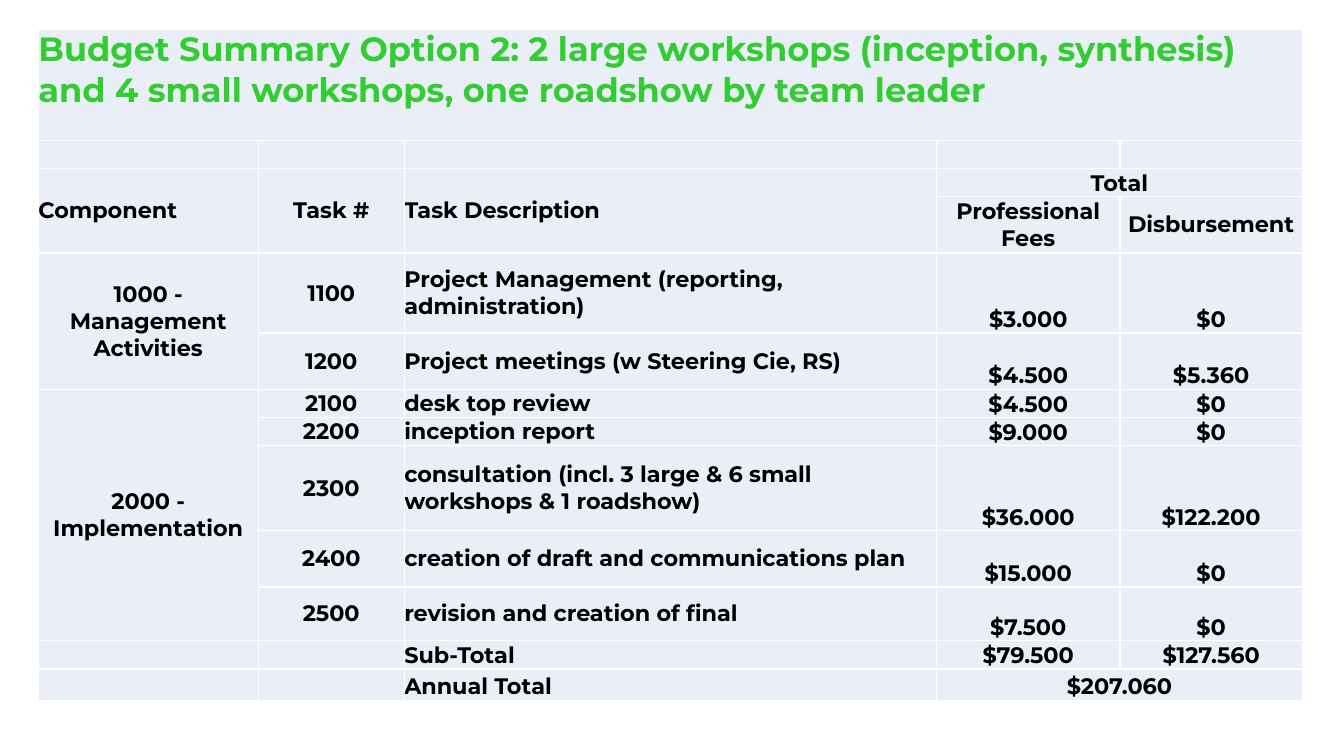
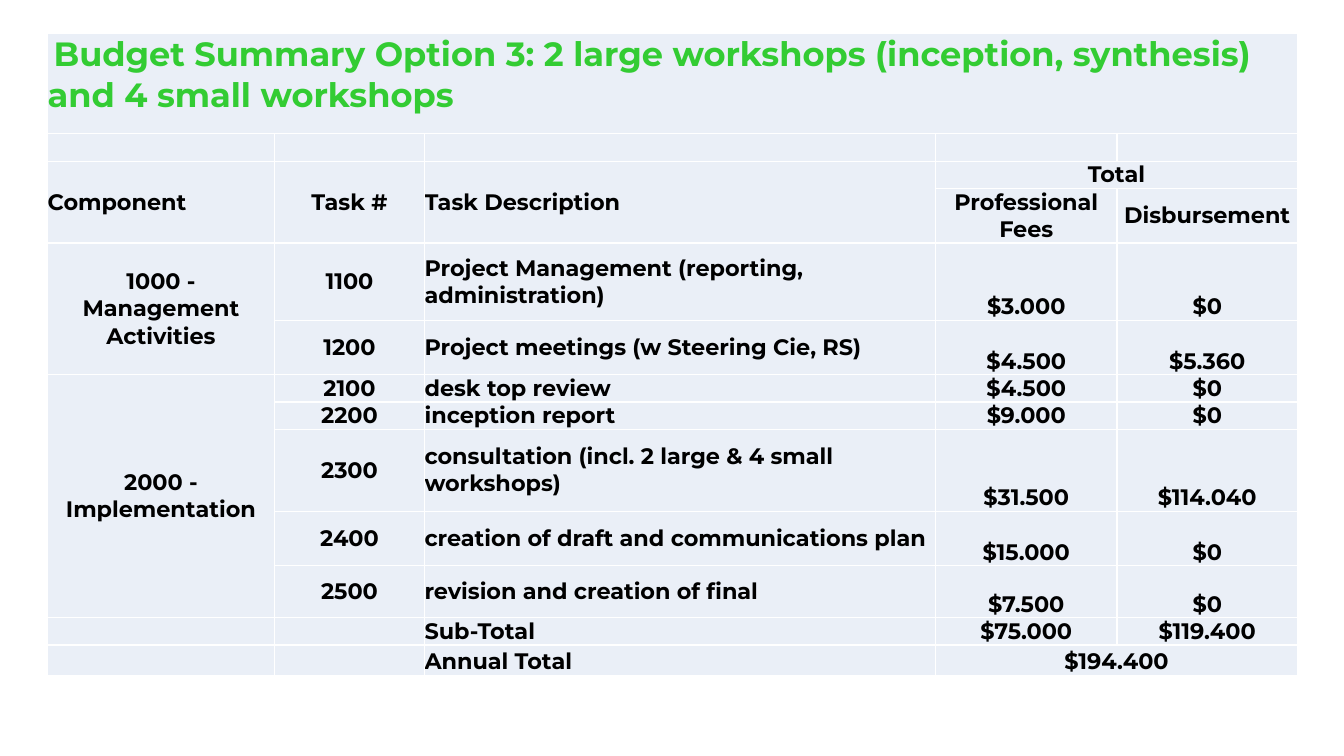
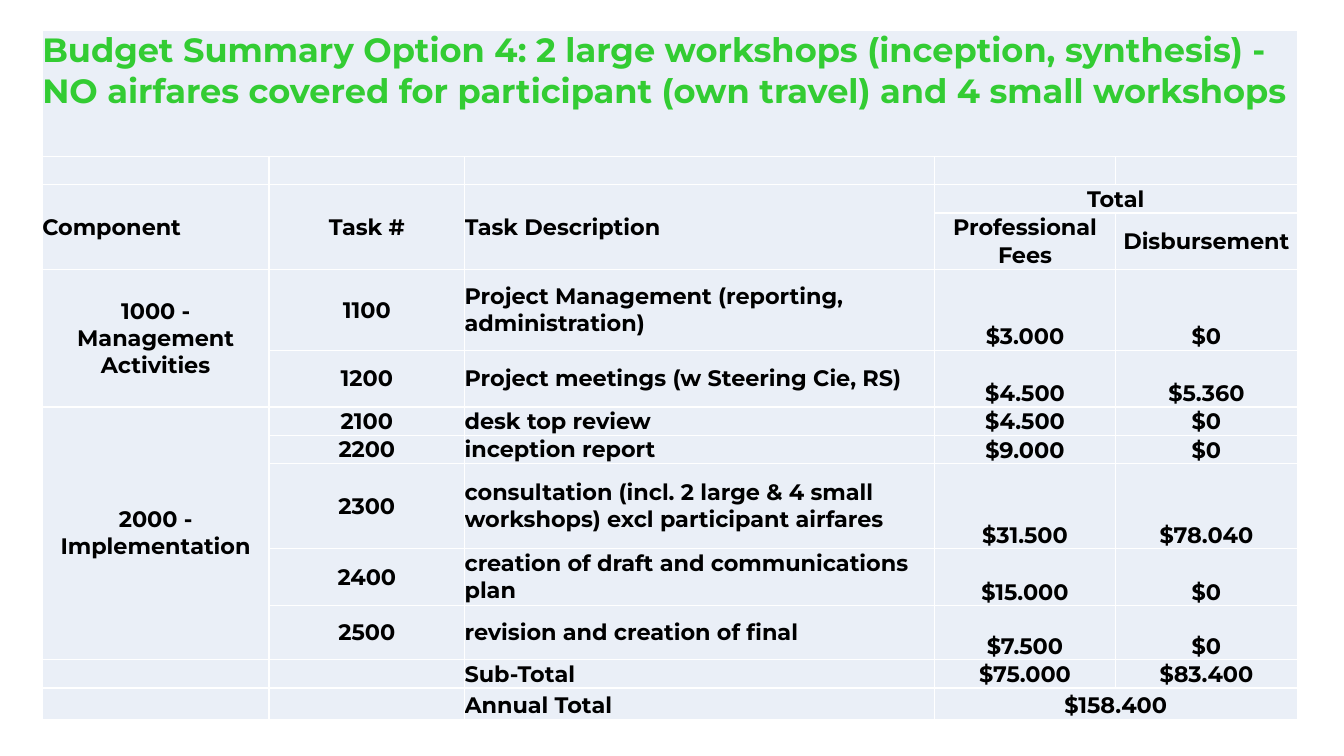
import pptx
import pptx.dml.color
import pptx.enum.text
import pptx.util
from lxml import etree

Pt = pptx.util.Pt
LEFT, CENTER = pptx.enum.text.PP_ALIGN.LEFT, pptx.enum.text.PP_ALIGN.CENTER
TOP, MIDDLE, BOTTOM = (pptx.enum.text.MSO_ANCHOR.TOP, pptx.enum.text.MSO_ANCHOR.MIDDLE,
                       pptx.enum.text.MSO_ANCHOR.BOTTOM)
DRAWING = "http://schemas.openxmlformats.org/drawingml/2006/main"
FONT = "Montserrat"
PALE, WHITE, BLACK, GREEN = "EAEFF7", "FFFFFF", "000000", "33CC33"

# Row heights below the title, as multiples of one text line
ROW_LINES = [1, 1, 2, 2.83, 2, 1, 1, 3, 2, 1.9, 1, 1.11]
# First row, first column, last row, last column
MERGES = [(0, 0, 0, 4), (2, 0, 3, 0), (2, 1, 3, 1), (2, 2, 3, 2), (2, 3, 2, 4),
          (4, 0, 5, 0), (6, 0, 10, 0), (12, 3, 12, 4)]

options = [
    dict(title="Budget Summary Option 2: 2 large workshops (inception, synthesis) "
               "and 4 small workshops, one roadshow by team leader",
         consultation=("consultation (incl. 3 large & 6 small workshops & 1 roadshow)", 36000, 122200),
         left=27.4, top=20.9, title_height=79.2, line=20.18, title_indent=0,
         columns=[157, 104.4, 380.2, 131, 130.3]),
    dict(title="Budget Summary Option 3: 2 large workshops (inception, synthesis) "
               "and 4 small workshops",
         consultation=("consultation (incl. 2 large & 4 small workshops)", 31500, 114040),
         left=34, top=24, title_height=71.5, line=19.5, title_indent=4.3,
         columns=[162, 107.3, 365, 129.6, 128.9]),
    dict(title="Budget Summary Option 4: 2 large workshops (inception, synthesis) "
               "- NO airfares covered for participant (own travel) and 4 small workshops",
         consultation=("consultation (incl. 2 large & 4 small workshops) "
                       "excl participant airfares", 31500, 78040),
         left=30.2, top=21.6, title_height=90, line=20.29, title_indent=0,
         columns=[162, 139.7, 335.5, 129.6, 129.6]),
]


def rgb(value):
    return pptx.dml.color.RGBColor.from_string(value)


def write(cell, text, size=16, color=BLACK, align=LEFT, anchor=MIDDLE, indent=0):
    cell.vertical_anchor = anchor
    paragraph = cell.text_frame.paragraphs[0]
    paragraph.alignment = align
    if indent:
        paragraph._p.get_or_add_pPr().set("indent", str(Pt(indent)))
    run = paragraph.add_run()
    run.text = text
    run.font.name, run.font.size, run.font.bold = FONT, Pt(size), True
    run.font.color.rgb = rgb(color)


deck = pptx.Presentation()
deck.slide_width, deck.slide_height = Pt(960), Pt(540)

for option in options:
    heights = [option["title_height"]] + [lines * option["line"] for lines in ROW_LINES]
    widths = option["columns"]
    slide = deck.slides.add_slide(deck.slide_layouts[6])
    budget = slide.shapes.add_table(
        len(heights), len(widths), Pt(option["left"]), Pt(option["top"]),
        Pt(sum(widths)), Pt(sum(heights))).table
    budget.first_row = budget.horz_banding = False
    for row, height in zip(budget.rows, heights):
        row.height = Pt(height)
    for column, width in zip(budget.columns, widths):
        column.width = Pt(width)

    for cell in budget.iter_cells():
        cell.margin_left = cell.margin_right = cell.margin_top = cell.margin_bottom = 0
        for side in ("lnL", "lnR", "lnT", "lnB"):
            border = etree.SubElement(cell._tc.get_or_add_tcPr(), f"{{{DRAWING}}}{side}", w=str(Pt(1)))
            border_fill = etree.SubElement(border, f"{{{DRAWING}}}solidFill")
            etree.SubElement(border_fill, f"{{{DRAWING}}}srgbClr", val=WHITE)
        cell.fill.solid()
        cell.fill.fore_color.rgb = rgb(PALE)
        # Keeps empty cells from growing past their row
        etree.SubElement(cell.text_frame.paragraphs[0]._p, f"{{{DRAWING}}}endParaRPr", sz="1600")
    for first_row, first_column, last_row, last_column in MERGES:
        budget.cell(first_row, first_column).merge(budget.cell(last_row, last_column))

    write(budget.cell(0, 0), option["title"], size=24, color=GREEN, anchor=TOP,
          indent=option["title_indent"])
    write(budget.cell(2, 0), "Component")
    write(budget.cell(2, 1), "Task #", align=CENTER)
    write(budget.cell(2, 2), "Task Description")
    write(budget.cell(2, 3), "Total", align=CENTER, anchor=BOTTOM)
    write(budget.cell(3, 3), "Professional Fees", align=CENTER)
    write(budget.cell(3, 4), "Disbursement", align=CENTER)
    write(budget.cell(4, 0), "1000 - Management Activities", align=CENTER)
    write(budget.cell(6, 0), "2000 - Implementation", align=CENTER)

    tasks = [
        ("1100", "Project Management (reporting, administration)", 3000, 0),
        ("1200", "Project meetings (w Steering Cie, RS)", 4500, 5360),
        ("2100", "desk top review", 4500, 0),
        ("2200", "inception report", 9000, 0),
        ("2300", *option["consultation"]),
        ("2400", "creation of draft and communications plan", 15000, 0),
        ("2500", "revision and creation of final", 7500, 0),
    ]
    for row, (number, description, fees, disbursement) in enumerate(tasks, start=4):
        write(budget.cell(row, 1), number, align=CENTER)
        write(budget.cell(row, 2), description)

    amounts = [task[2:] for task in tasks]
    subtotals = [sum(column) for column in zip(*amounts)]
    write(budget.cell(11, 2), "Sub-Total", anchor=BOTTOM)
    write(budget.cell(12, 2), "Annual Total", anchor=BOTTOM)
    for row, row_amounts in enumerate([*amounts, subtotals, [sum(subtotals)]], start=4):
        for column, amount in enumerate(row_amounts, start=3):
            write(budget.cell(row, column), f"${amount:,}".replace(",", "."),
                  align=CENTER, anchor=BOTTOM)

deck.save("out.pptx")
